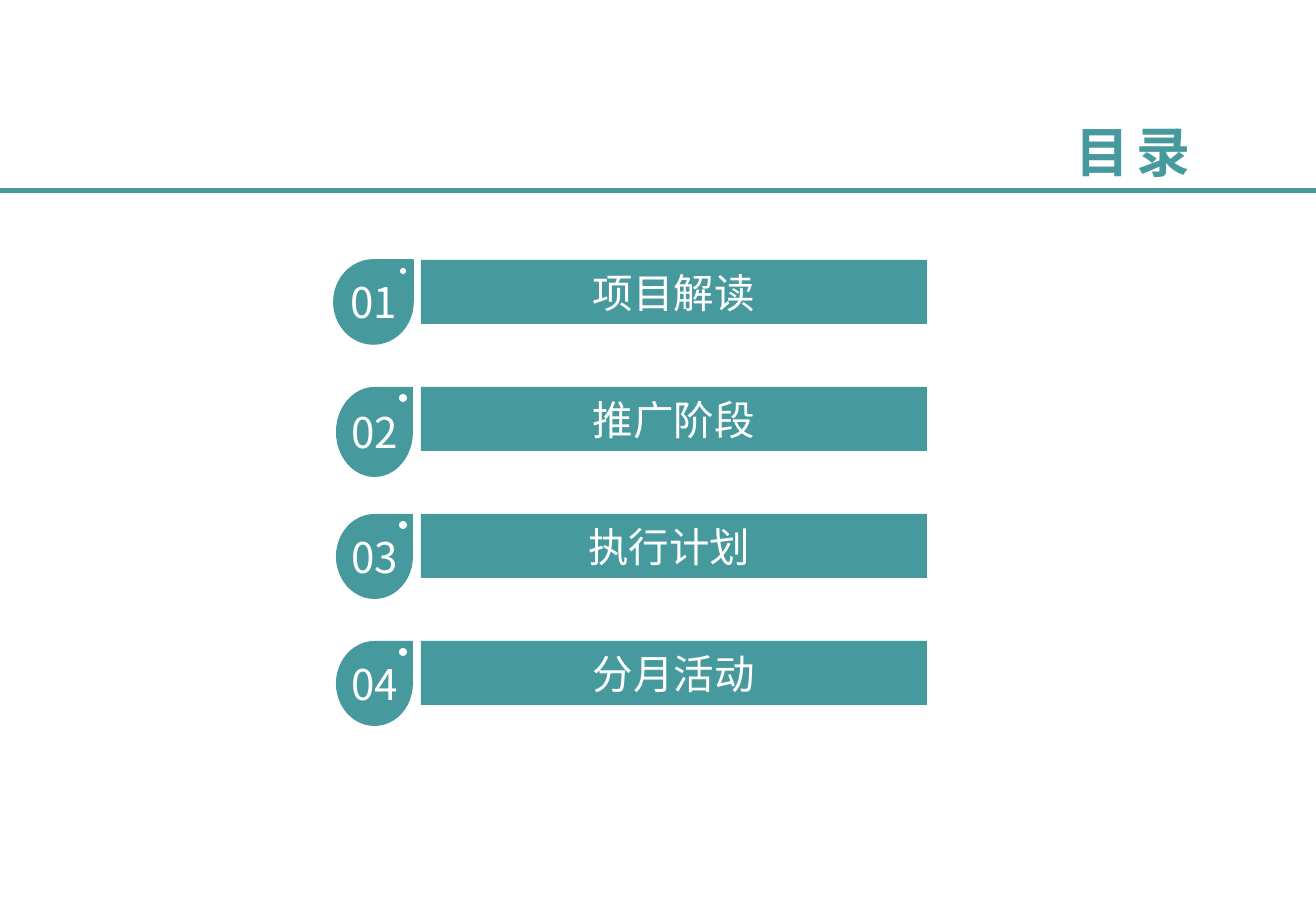
from lxml import etree
from pptx import Presentation
from pptx import util as u
from pptx.dml import color
from pptx.enum import shapes, text
from pptx.oxml import ns

SCALE = 7526  # EMU in one px
COLORS = {"teal": "46999D", "white": "FFFFFF"}
FONT = "Noto Sans CJK SC"
SLIDE_W, SLIDE_H = 1316, 911
FIRST_TOP, PITCH = 260, 127

# Entry, and the left, width, height of its drop and the size of its dot
ENTRIES = [
    ("项目解读", 334, 79, 84, 6),
    ("推广阶段", 336, 77, 90, 8),
    ("执行计划 ", 336, 77, 85, 8),
    ("分月活动", 336, 77, 85, 8),
]


def px(n):
    return u.Emu(n * SCALE)


def rgb(name):
    return color.RGBColor.from_string(COLORS[name])


def set_text(sp, words, fill, align, fmt, frame):
    """Write one formatted line of text into a shape or placeholder."""
    tf = sp.text_frame
    for key, value in frame.items():
        setattr(tf, key, value)
    p = tf.paragraphs[0]
    p.alignment = align
    r = p.add_run()
    r.text = words
    for key, value in fmt.items():
        setattr(r.font, key, value)
    r.font.name = FONT
    r.font.color.rgb = rgb(fill)
    rPr = r._r.get_or_add_rPr()
    etree.SubElement(rPr, ns.qn("a:ea"), typeface=FONT)
    return rPr


def add_block(slide, kind, box, fill):
    """Add a flat filled shape without outline or shadow."""
    sp = slide.shapes.add_shape(kind, *map(px, box))
    sp.shadow.inherit = False
    sp.fill.solid()
    sp.fill.fore_color.rgb = rgb(fill)
    sp.line.fill.background()
    return sp


def add_title(slide, words):
    sp = slide.shapes.title
    sp.left, sp.top, sp.width, sp.height = map(px, (1022, 102, 181, 98))
    rPr = set_text(sp, words, "teal", text.PP_ALIGN.RIGHT,
                   {"size": u.Pt(32), "bold": True},
                   {"vertical_anchor": text.MSO_ANCHOR.MIDDLE,
                    "auto_size": text.MSO_AUTO_SIZE.NONE, "word_wrap": True})
    rPr.set("spc", "400")


def add_rule(slide, y):
    line = slide.shapes.add_connector(
        shapes.MSO_CONNECTOR.STRAIGHT, px(0), px(y), px(SLIDE_W), px(y))
    line.line.color.rgb = rgb("teal")
    line.line.width = u.Pt(3)
    etree.SubElement(line._element.spPr, ns.qn("a:effectLst"))


def add_bar(slide, top, words):
    sp = add_block(slide, shapes.MSO_SHAPE.RECTANGLE, (421, top, 506, 64), "teal")
    set_text(sp, words, "white", text.PP_ALIGN.CENTER, {"size": u.Pt(24)},
             {"vertical_anchor": text.MSO_ANCHOR.MIDDLE})


def add_drop(slide, top, number, left, width, height, dot):
    sp = add_block(slide, shapes.MSO_SHAPE.TEAR, (left, top, width, height), "teal")
    if number == 1:  # the first drop is outlined
        sp.line.color.rgb = rgb("teal")
        sp.line.width = u.Pt(1)
    margins = {f"margin_{side}": 0 for side in ("left", "top", "right", "bottom")}
    set_text(sp, f"{number:02d}", "white", text.PP_ALIGN.CENTER, {"size": u.Pt(25)},
             {"vertical_anchor": text.MSO_ANCHOR.MIDDLE, "word_wrap": False, **margins})
    half = dot // 2
    add_block(slide, shapes.MSO_SHAPE.OVAL,
              (403 - half, top + 11 - half, dot, dot), "white")


def main():
    prs = Presentation()
    prs.slide_width, prs.slide_height = px(SLIDE_W), px(SLIDE_H)
    slide = prs.slides.add_slide(prs.slide_layouts[5])

    # Heading
    add_title(slide, "目录")
    add_rule(slide, 191)

    # Contents entries
    for i, (words, *drop) in enumerate(ENTRIES):
        top = FIRST_TOP + i * PITCH
        add_bar(slide, top, words)
        add_drop(slide, top, i + 1, *drop)

    prs.save("out.pptx")


if __name__ == "__main__":
    main()
